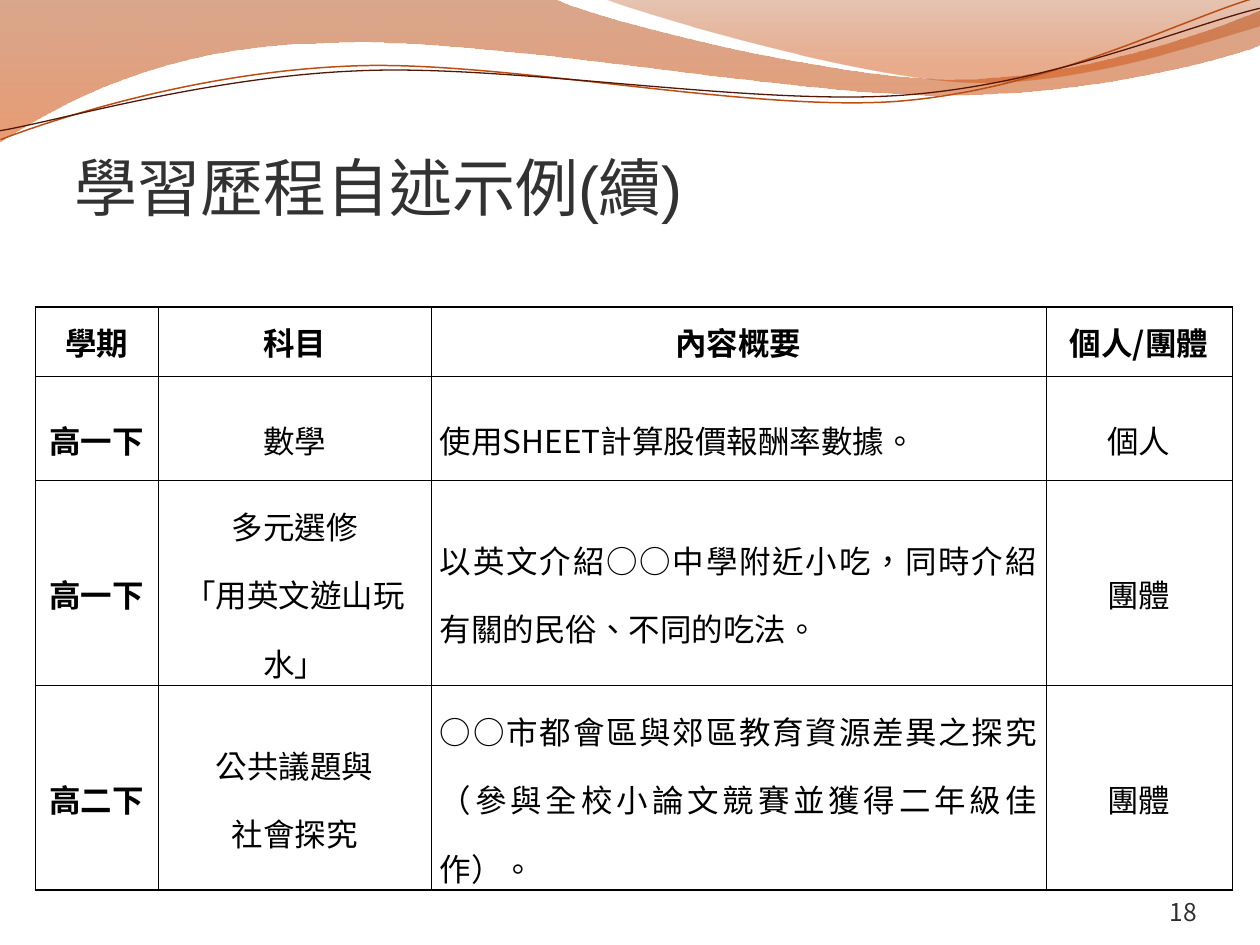
"""Build the slide with the table of learning portfolio examples."""
import pptx
import pptx.dml.color
import pptx.enum.lang
import pptx.enum.text
import pptx.oxml
import pptx.oxml.ns
import pptx.util
from lxml import etree

PX = 914400 / 126
COLORS = {
    "black": "000000", "white": "FFFFFF", "title": "323232", "number": "303030",
    "rust": "AC3D02", "orange": "D54A00", "rust2": "AE3C00", "orange2": "CF4800",
    "line": "BC4E13", "dark": "521707",
}
ALIGN = pptx.enum.text.PP_ALIGN
ANCHOR = pptx.enum.text.MSO_ANCHOR
qn = pptx.oxml.ns.qn


def emu(px):
    return pptx.util.Emu(round(px * PX))


def rgb(name):
    return pptx.dml.color.RGBColor.from_string(COLORS[name])


class Deck:
    """Hold the style and the current slide."""

    font = "Noto Sans CJK SC"
    language = pptx.enum.lang.MSO_LANGUAGE_ID.TRADITIONAL_CHINESE

    def __init__(self, width, height):
        self.prs = pptx.Presentation()
        self.prs.slide_width, self.prs.slide_height = emu(width), emu(height)
        self.s = self.prs.slides.add_slide(self.prs.slide_layouts[5])

    def style(self, font, size, color, bold=False):
        font.size, font.bold, font.name = pptx.util.Pt(size), bold, self.font
        font.color.rgb = rgb(color)
        font.language_id = self.language
        etree.SubElement(font._element, qn("a:ea"), typeface=self.font)

    def frame(self, tf, insets, anchor):
        tf.margin_left, tf.margin_top, tf.margin_right, tf.margin_bottom = map(emu, insets)
        tf.vertical_anchor, tf.word_wrap = anchor, True
        tf.auto_size = pptx.enum.text.MSO_AUTO_SIZE.NONE

    def outline(self, start, steps, close):
        """Draw lines (2 numbers) and cubic curves (6 numbers)."""
        builder = self.s.shapes.build_freeform(*map(emu, start), scale=1.0)
        builder.add_line_segments([tuple(map(emu, step[-2:])) for step in steps], close=close)
        sp = builder.convert_to_shape()
        sp.shadow.inherit = False
        for segment, step in zip(sp._element.findall(".//" + qn("a:lnTo")), steps):
            if len(step) == 6:
                segment.tag = qn("a:cubicBezTo")
                for i, k in enumerate((0, 2)):
                    x, y = emu(step[k]) - sp.left, emu(step[k + 1]) - sp.top
                    pt = etree.Element(qn("a:pt"), x=str(x), y=str(y))
                    segment.insert(i, pt)
        return sp

    def wave(self, start, steps, stops):
        sp = self.outline(start, steps, True)
        sp.line.fill.background()
        sp.fill.gradient()
        sp.fill.gradient_angle = 270
        for stop, (position, color, _) in zip(sp.fill.gradient_stops, stops):
            stop.position, stop.color.rgb = position, rgb(color)
        clrs = sp._element.spPr.findall(".//" + qn("a:srgbClr"))
        for clr, (_, _, opacity) in zip(clrs, stops):
            etree.SubElement(clr, qn("a:alpha"), val=str(opacity * 1000))

    def curve(self, start, steps, color, width):
        sp = self.outline(start, steps, False)
        sp.rotation = -2.7
        sp.fill.background()
        sp.line.color.rgb, sp.line.width = rgb(color), pptx.util.Pt(width)

    def title(self, box, text, suffix):
        sp = self.s.shapes.title
        sp._element.getparent().append(sp._element)
        sp.left, sp.top, sp.width, sp.height = map(emu, box)
        self.frame(sp.text_frame, (0, 6, 0, 0), ANCHOR.BOTTOM)
        p = sp.text_frame.paragraphs[0]
        p.alignment = ALIGN.LEFT
        for part in (text, suffix):
            r = p.add_run()
            r.text = part
            self.style(r.font, 36, "title")
        r.font.name = "Arial"

    def number(self, box, text):
        tf = self.s.shapes.add_textbox(*map(emu, box)).text_frame
        self.frame(tf, (0, 0, 0, 0), ANCHOR.BOTTOM)
        p = tf.paragraphs[0]
        p.text, p.alignment = text, ALIGN.RIGHT
        self.style(p.font, 14, "number")

    def cell(self, cell, text, bold, align, spacing, widths):
        cell.text, cell.vertical_anchor = text, ANCHOR.MIDDLE
        cell.margin_left = cell.margin_right = emu(9)
        cell.margin_top = cell.margin_bottom = 0
        cell.fill.solid()
        cell.fill.fore_color.rgb = rgb("white")
        for p in cell.text_frame.paragraphs:
            p.alignment, p.line_spacing = align, spacing
            self.style(p.font, 18, "black", bold)
        for i, (side, width) in enumerate(zip("LRTB", widths)):
            cell._tc.tcPr.insert(i, pptx.oxml.parse_xml(
                f'<a:ln{side} {pptx.oxml.ns.nsdecls("a")} w="{pptx.util.Pt(width)}"><a:solidFill>'
                f'<a:srgbClr val="{COLORS["black"]}"/></a:solidFill></a:ln{side}>'))

    def table(self, left, top, widths, heights, rows):
        size = (left, top, sum(widths), sum(heights))
        table = self.s.shapes.add_table(len(rows), len(widths), *map(emu, size)).table
        table.first_row = table.horz_banding = False
        for column, width in zip(table.columns, widths):
            column.width = emu(width)
        for i, (row, height) in enumerate(zip(rows, heights)):
            table.rows[i].height = emu(height)
            borders = (0.5, 0.5, 0.5 if i else 1, 0.5 if i < len(rows) - 1 else 1)
            for j, text in enumerate(row):
                align = ALIGN.JUSTIFY if i and j == 2 else ALIGN.CENTER
                self.cell(table.cell(i, j), text, i == 0 or j == 0, align,
                          1.5 if i else 1.0, borders)


def main():
    deck = Deck(1260, 945)
    deck.wave((0, 0), [
        (554, -1), (600, 21, 837, 79, 955, 79), (1075, 79, 1207, 33, 1260, 11),
        (1261, 45), (1239, 55, 1096, 96, 940, 95), (784, 95, 481, 35, 324, 43),
        (163, 45, 58, 105, -1, 142),
    ], [(0, "rust", 45), (1, "orange", 55)])
    deck.wave((604, -1), [
        (641, 14, 859, 78, 969, 82), (1079, 86, 1211, 40, 1260, 26), (1260, 0),
    ], [(0, "rust2", 30), (0.8, "orange2", 45)])
    deck.curve((-2, 110), [
        (59, 90, 199, 52, 350, 53), (499, 53, 745, 118, 896, 114),
        (1049, 109, 1184, 45, 1260, 27),
    ], "line", 0.85)
    deck.curve((-2, 101), [
        (57, 94, 207, 57, 358, 58), (509, 58, 750, 112, 902, 108),
        (1052, 104, 1188, 52, 1262, 38),
    ], "dark", 0.75)
    deck.title((74, 125, 1186, 99), "學習歷程自述示例", "(續)")
    deck.number((1092, 876, 105, 50), "18")
    deck.table(35, 307, (123, 273, 615, 186), (69, 104, 129, 174), [
        ("學期", "科目", "內容概要", "個人/團體"),
        ("高一下", "數學", "使用SHEET計算股價報酬率數據。", "個人"),
        ("高一下", "多元選修\n「用英文遊山玩水」",
         "以英文介紹○○中學附近小吃，同時介紹有關的民俗、不同的吃法。", "團體"),
        ("高二下", "公共議題與\n社會探究",
         "○○市都會區與郊區教育資源差異之探究（參與全校小論文競賽並獲得二年級佳作）。", "團體"),
    ])
    deck.prs.save("out.pptx")


if __name__ == "__main__":
    main()
